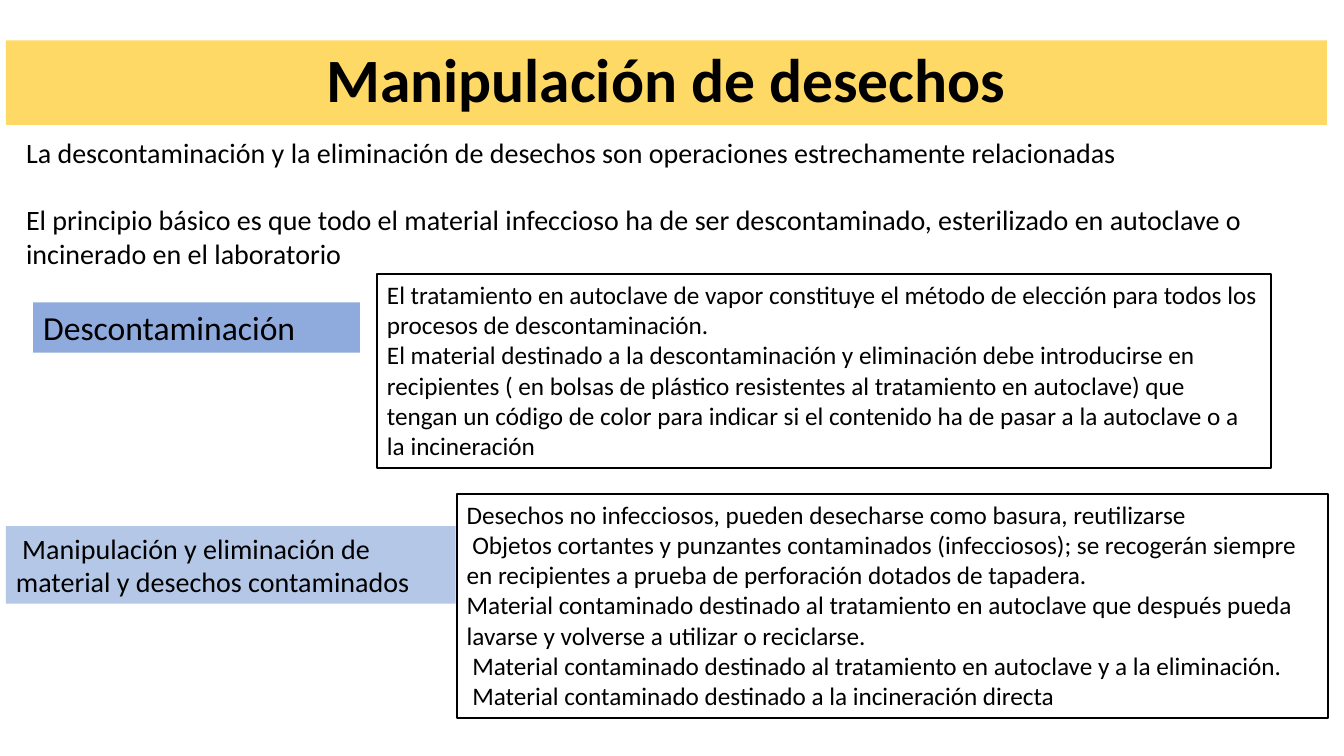
from collections import namedtuple
from dataclasses import dataclass

from pptx import Presentation
from pptx import util as u
from pptx.dml.color import RGBColor
from pptx.enum import shapes, text

Box = namedtuple("Box", "col row cols rows")
CELL = u.Inches(0.1)


@dataclass(frozen=True)
class Theme:
    """Colours and type sizes of the slide."""
    font: str = "Calibri"
    ink: str = "000000"
    banner: str = "FFD966"
    strong_label: str = "8FAADC"
    soft_label: str = "B4C7E7"
    title: int = 44
    heading: int = 24
    body: int = 20
    detail: int = 18
    border: float = 1.5


THEME = Theme()

INTRO = [
    "La descontaminación y la eliminación de desechos son operaciones estrechamente relacionadas",
    "El principio básico es que todo el material infeccioso ha de ser descontaminado, "
    "esterilizado en autoclave o incinerado en el laboratorio",
]
DECONTAMINATION = [
    "El tratamiento en autoclave de vapor constituye el método de elección para todos los",
    "procesos de descontaminación.",
    "El material destinado a la descontaminación y eliminación debe introducirse en recipientes "
    "( en bolsas de plástico resistentes al tratamiento en autoclave) que tengan un código de color "
    "para indicar si el contenido ha de pasar a la autoclave o a la incineración",
]
DISPOSAL = [
    "Desechos no infecciosos, pueden desecharse como basura, reutilizarse",
    " Objetos cortantes y punzantes contaminados (infecciosos); se recogerán siempre en recipientes "
    "a prueba de perforación dotados de tapadera.",
    "Material contaminado destinado al tratamiento en autoclave que después pueda lavarse "
    "y volverse a utilizar o reciclarse.",
    " Material contaminado destinado al tratamiento en autoclave y a la eliminación.",
    " Material contaminado destinado a la incineración directa",
]


def write(frame, paragraphs, size, bold=False, align=text.PP_ALIGN.LEFT, anchor=text.MSO_ANCHOR.TOP):
    """Fill a frame with paragraphs and return them."""
    frame.word_wrap = True
    frame.vertical_anchor = anchor
    for index, wording in enumerate(paragraphs):
        paragraph = frame.paragraphs[0] if index == 0 else frame.add_paragraph()
        paragraph.alignment = align
        run = paragraph.add_run()
        run.text = wording
        run.font.name = THEME.font
        run.font.size = u.Pt(size)
        run.font.bold = bold
        run.font.color.rgb = RGBColor.from_string(THEME.ink)
    return frame.paragraphs


def panel(slide, box, fill=None):
    """Add a filled panel, or an outlined one when no fill is given."""
    shape = slide.shapes.add_shape(shapes.MSO_SHAPE.RECTANGLE, *(round(n * CELL) for n in box))
    shape.shadow.inherit = False
    if fill:
        shape.fill.solid()
        shape.fill.fore_color.rgb = RGBColor.from_string(fill)
        shape.line.fill.background()
    else:
        shape.fill.background()
        shape.line.color.rgb = RGBColor.from_string(THEME.ink)
        shape.line.width = u.Pt(THEME.border)
    return shape.text_frame


def banner(slide, box, title):
    """Place the title band."""
    heading, = write(panel(slide, box, THEME.banner), [title], THEME.title, bold=True,
                     align=text.PP_ALIGN.CENTER, anchor=text.MSO_ANCHOR.MIDDLE)
    heading.line_spacing = 0.9


def introduction(slide, box, paragraphs):
    """Place the opening statements, one line apart."""
    frame = slide.shapes.add_textbox(*(round(n * CELL) for n in box)).text_frame
    statements = write(frame, paragraphs, THEME.body)
    for statement in statements[1:]:
        statement.space_before = u.Pt(THEME.body * 1.22)


def topic(slide, box, label, label_area, label_fill, label_size, details, detail_col):
    """Place a coloured label and its outlined details inside the box."""
    label_box = Box(box.col + label_area.col, box.row + label_area.row, label_area.cols, label_area.rows)
    write(panel(slide, label_box, label_fill), [label], label_size)
    detail_box = Box(box.col + detail_col, box.row, box.cols - detail_col, box.rows)
    write(panel(slide, detail_box), details, THEME.detail)


def main():
    """Build and save the slide."""
    deck = Presentation()
    deck.slide_width, deck.slide_height = u.Inches(13.33), u.Inches(7.5)
    slide = deck.slides.add_slide(deck.slide_layouts[6])
    banner(slide, Box(0.6, 4, 131, 8.4), "Manipulación de desechos")
    introduction(slide, Box(1.6, 12.9, 130.1, 17.5), INTRO)
    topic(slide, Box(3.3, 27.2, 122.8, 19.2), "Descontaminación", Box(0, 2.8, 32.4, 5),
          THEME.strong_label, THEME.heading, DECONTAMINATION, 34.1)
    topic(slide, Box(0.6, 49, 131.1, 22.2),
          " Manipulación y eliminación de material y desechos contaminados", Box(0, 3.2, 44.6, 7.7),
          THEME.soft_label, THEME.body, DISPOSAL, 44.7)
    deck.save("out.pptx")


if __name__ == "__main__":
    main()
